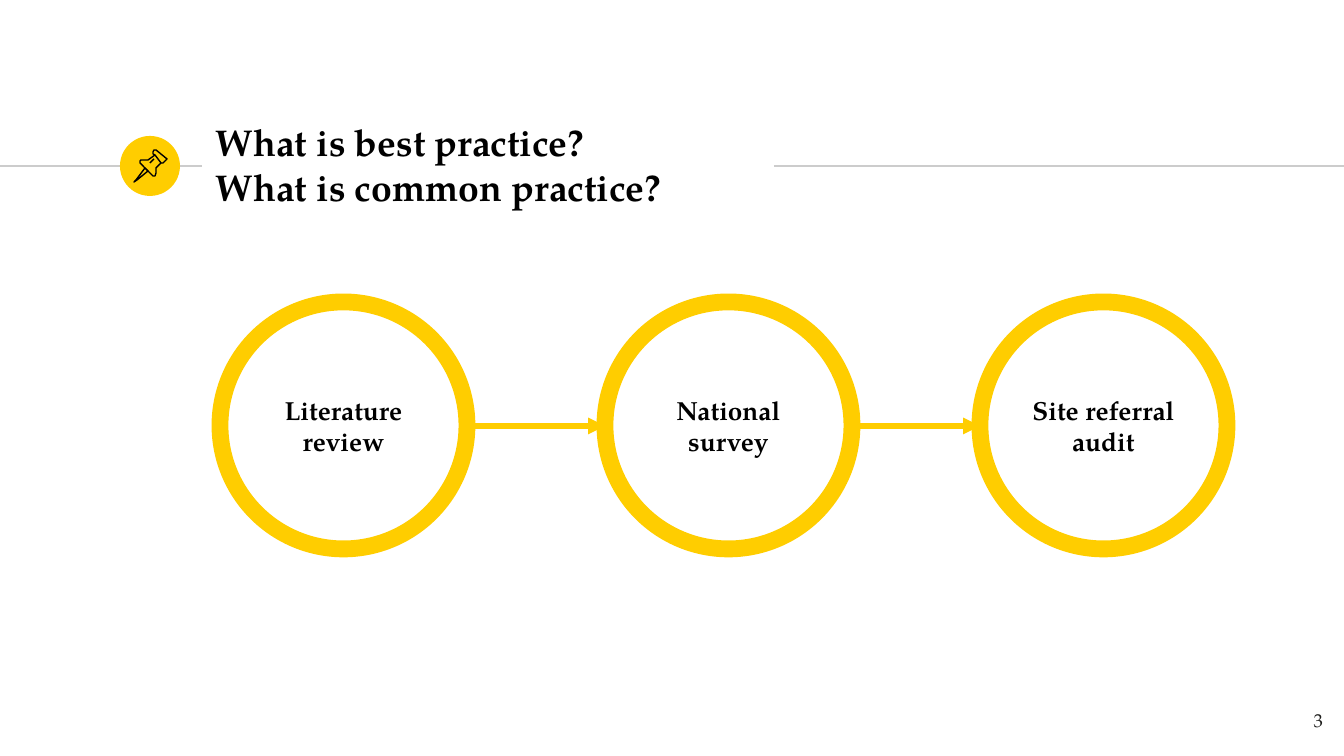
"""Build the slide on best and common practice with its three study stages."""
from lxml import etree
from pptx import Presentation
from pptx.dml.color import RGBColor
from pptx.enum.shapes import MSO_CONNECTOR, MSO_SHAPE
from pptx.enum.text import MSO_ANCHOR, PP_ALIGN
from pptx.oxml.ns import qn
from pptx.util import Pt

PX = 914400 / 134.4
FONT = "TeX Gyre Pagella"
YELLOW = RGBColor(0xFF, 0xCD, 0x00)
GREY = RGBColor(0xCC, 0xCC, 0xCC)
BLACK = RGBColor(0x00, 0x00, 0x00)
INK = RGBColor(0x1D, 0x1D, 0x1B)
STRAIGHT = MSO_CONNECTOR.STRAIGHT
OVAL = MSO_SHAPE.OVAL
TOP, MIDDLE = MSO_ANCHOR.TOP, MSO_ANCHOR.MIDDLE
LEFT, CENTER, RIGHT = PP_ALIGN.LEFT, PP_ALIGN.CENTER, PP_ALIGN.RIGHT

prs = Presentation()
prs.slide_width, prs.slide_height = round(1344 * PX), round(756 * PX)
slide = prs.slides.add_slide(prs.slide_layouts[6])
shapes = slide.shapes


def px(*lengths):
    return [round(length * PX) for length in lengths]


def write(shape, text, size, color=BLACK, bold=True, align=LEFT, anchor=MIDDLE):
    frame = shape.text_frame
    frame.word_wrap = True
    frame.vertical_anchor = anchor
    frame.margin_left, frame.margin_top, frame.margin_right, frame.margin_bottom = px(13, 13, 13, 13)
    paragraph = frame.paragraphs[0]
    paragraph.text = text
    paragraph.alignment = align
    for run in paragraph.runs:
        run.font.name = FONT
        run.font.size = Pt(size)
        run.font.bold = bold
        run.font.color.rgb = color


RULE_Y = 166
RING_TOP, RING_SIZE = 302, 247
RING_MIDDLE = 426
stages = [(220, "Literature review"), (605, "National survey"), (980, "Site referral audit")]

rules = [(0, 202, RULE_Y, GREY, 0.75), (774, 1344, RULE_Y, GREY, 0.75)]
arrows = [
    (start + RING_SIZE, end, RING_MIDDLE, YELLOW, 3)
    for (start, _), (end, _) in zip(stages, stages[1:])
]
for start, end, y, color, width in rules + arrows:
    line = shapes.add_connector(STRAIGHT, *px(start, y, end, y))
    line.line.color.rgb = color
    line.line.width = Pt(width)
    properties = line._element.spPr
    if color == YELLOW:
        etree.SubElement(properties.find(qn("a:ln")), qn("a:tailEnd"), type="triangle")
    etree.SubElement(properties, qn("a:effectLst"))

badge = shapes.add_shape(OVAL, *px(120, 136, 60, 60))
badge.shadow.inherit = False
badge.fill.solid()
badge.fill.fore_color.rgb = YELLOW
badge.line.fill.background()

needle = [(145, 168), (136, 180), (134, 182), (137, 180), (148, 171)]
cap = [(155, 155), (161, 163), (163, 163), (166, 160), (167, 159),
       (156, 150), (154, 150), (153, 152), (153, 154)]
body = [(155, 155), (148, 160), (145, 160), (141, 160), (140, 161), (140, 163),
        (153, 176), (155, 176), (156, 173), (156, 168), (161, 163)]
glint = [(150, 163), (154, 159)]
for points, closed in [(needle, True), (cap, True), (body, False), (glint, False)]:
    builder = shapes.build_freeform(*points[0], scale=PX)
    builder.add_line_segments(points[1:], close=closed)
    pin_part = builder.convert_to_shape()
    pin_part.shadow.inherit = False
    pin_part.fill.background()
    pin_part.line.color.rgb = BLACK
    pin_part.line.width = Pt(0.75)

title = shapes.add_textbox(*px(203, 132, 570, 65))
write(title, "What is best practice?\vWhat is common practice?", size=20)

for left, stage in stages:
    ring = shapes.add_shape(OVAL, *px(left, RING_TOP, RING_SIZE, RING_SIZE))
    ring.shadow.inherit = False
    ring.fill.background()
    ring.line.color.rgb = YELLOW
    ring.line.width = Pt(9)
    write(ring, stage, size=14, align=CENTER)

page_number = shapes.add_textbox(*px(1255, 698, 81, 58))
write(page_number, "3", size=10, color=INK, bold=False, align=RIGHT, anchor=TOP)

prs.save("out.pptx")
